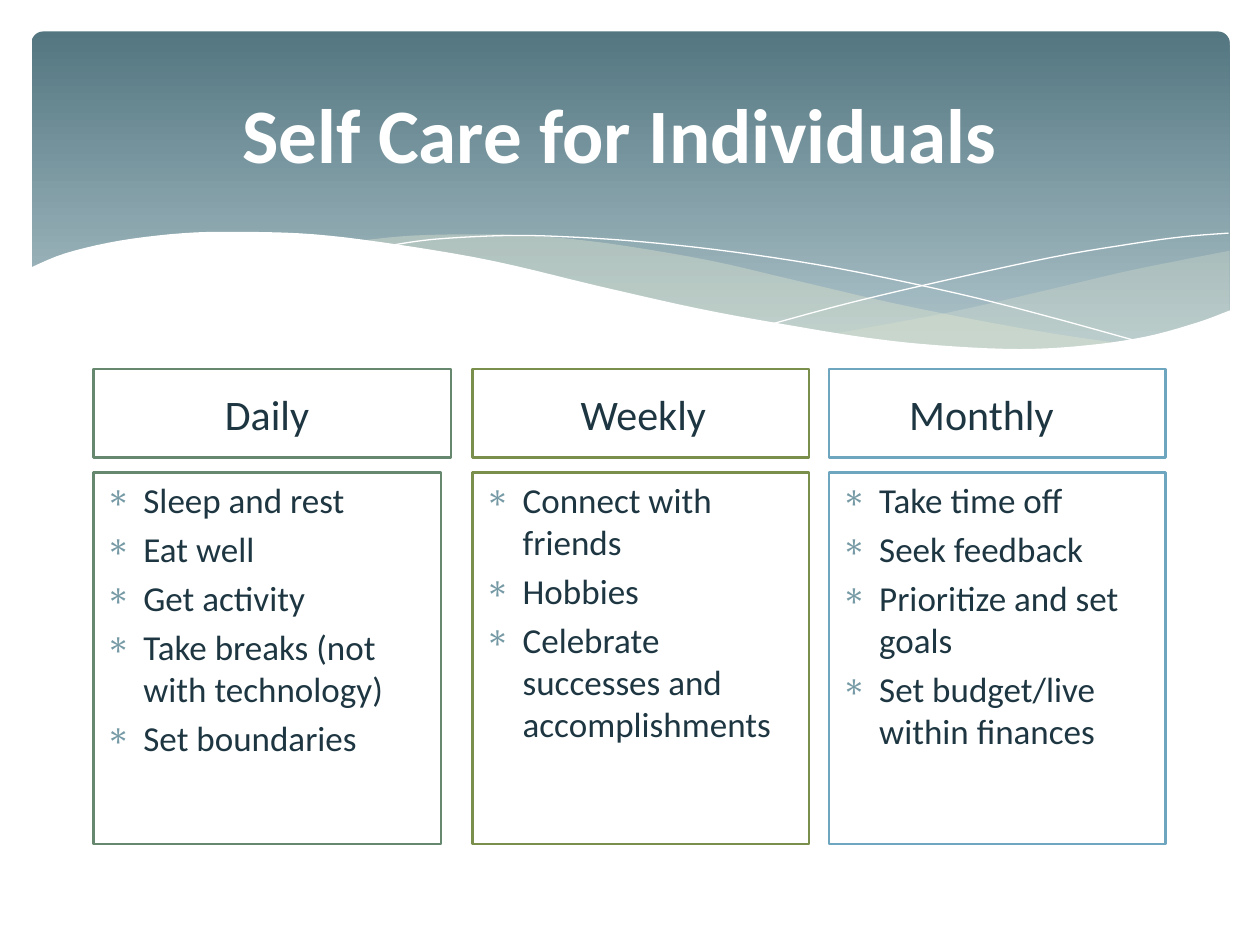
from lxml import etree
from pptx import Presentation
from pptx.dml.color import RGBColor
from pptx.enum.shapes import MSO_SHAPE
from pptx.enum.text import MSO_ANCHOR, PP_ALIGN
from pptx.oxml.ns import qn
from pptx.util import Inches, Pt

RECTANGLE = MSO_SHAPE.RECTANGLE
ROUNDED = MSO_SHAPE.ROUNDED_RECTANGLE
CENTER, LEFT = PP_ALIGN.CENTER, PP_ALIGN.LEFT
MIDDLE, TOP = MSO_ANCHOR.MIDDLE, MSO_ANCHOR.TOP
TITLE_ONLY = 5

WHITE = RGBColor(0xFF, 0xFF, 0xFF)
INK = RGBColor(0x1D, 0x36, 0x41)
BULLET = RGBColor(0x75, 0x9A, 0xA5)
BANNER_DARK = RGBColor(0x53, 0x76, 0x80)
BANNER_LIGHT = RGBColor(0xAC, 0xC2, 0xC9)
PALE = RGBColor(0xDF, 0xE6, 0xD0)
GREEN = RGBColor(0x65, 0x88, 0x6E)
OLIVE = RGBColor(0x7A, 0x8F, 0x4C)
BLUE = RGBColor(0x6F, 0xA6, 0xBF)

# Key points of the banner's curves, in inches
RIGHT_WAVE = [
    [(9.76, 1.99), (9.35, 2.07), (8.91, 2.16), (8.32, 2.3), (7.53, 2.48), (6.61, 2.65)],
    [(6.61, 2.65), (7.18, 2.72), (7.69, 2.77), (8.14, 2.78), (8.54, 2.76),
     (8.97, 2.7), (9.35, 2.61), (9.76, 2.47)],
]
MIDDLE_WAVE = [
    [(8.93, 2.73), (8.37, 2.65), (7.75, 2.54), (7.06, 2.4), (6.29, 2.22), (5.69, 2.08),
     (5.14, 1.98), (4.65, 1.91), (4.2, 1.87), (3.8, 1.86), (3.28, 1.87), (2.86, 1.91)],
    [(2.86, 1.91), (3.42, 1.99), (4.04, 2.11), (4.91, 2.32), (5.66, 2.48), (6.34, 2.61),
     (6.95, 2.7), (7.48, 2.76), (7.96, 2.78), (8.48, 2.77), (8.93, 2.73)],
]
FALLING_LINE = [
    [(3.09, 1.95), (3.44, 1.9), (4.01, 1.87), (4.5, 1.88), (5.1, 1.92), (5.82, 2),
     (6.65, 2.13), (7.6, 2.33), (8.31, 2.51), (9.07, 2.72)],
]
RISING_LINE = [
    [(6.13, 2.57), (6.72, 2.41), (7.48, 2.23), (8.36, 2.04), (8.95, 1.94),
     (9.38, 1.88), (9.75, 1.85)],
]
WHITE_WAVE = [
    [(0.23, 2.13), (0.52, 2.01), (0.95, 1.91), (1.46, 1.85), (1.93, 1.84), (2.5, 1.86),
     (3.15, 1.94), (3.91, 2.07), (4.75, 2.27), (5.55, 2.45), (6.26, 2.58), (6.88, 2.68),
     (7.44, 2.74), (8.09, 2.77), (8.63, 2.74), (9.1, 2.67), (9.5, 2.56), (9.77, 2.46)],
    [(9.77, 3.29), (0.23, 3.29)],
]

# Heading, colour, left, heading width, list width, heading (left, right) insets, items
COLUMNS = [
    ("Daily", GREEN, 0.74, 2.84, 2.76, (0.1, 0.18),
     ["Sleep and rest", "Eat well", "Get activity",
      "Take breaks (not with technology)", "Set boundaries"]),
    ("Weekly", OLIVE, 3.75, 2.67, 2.67, (0.14, 0.1),
     ["Connect with friends", "Hobbies", "Celebrate successes and accomplishments"]),
    ("Monthly", BLUE, 6.58, 2.67, 2.67, (0.1, 0.35),
     ["Take time off", "Seek feedback", "Prioritize and set goals",
      "Set budget/live within finances"]),
]


def smooth_points(points, steps=5):
    """Return points along a Catmull-Rom spline through the key points."""
    if len(points) < 3:
        return points
    padded = [points[0], *points, points[-1]]
    result = [points[0]]
    for a, b, c, d in zip(padded, padded[1:], padded[2:], padded[3:]):
        for step in range(1, steps + 1):
            t = step / steps
            result.append(tuple(
                0.5 * (2 * q + (r - p) * t + (2 * p - 5 * q + 4 * r - s) * t ** 2
                       + (3 * q - p - 3 * r + s) * t ** 3)
                for p, q, r, s in zip(a, b, c, d)))
    return result


class SlideBuilder:
    font = "Calibri"

    def __init__(self, slide):
        self.slide = slide

    def style_text(self, text_frame, size, color, align, anchor,
                   bold=False, insets=(0.1, 0.1)):
        text_frame.word_wrap = True
        text_frame.vertical_anchor = anchor
        text_frame.margin_left, text_frame.margin_right = map(Inches, insets)
        for paragraph in text_frame.paragraphs:
            paragraph.alignment = align
            for run in paragraph.runs:
                run.font.name = self.font
                run.font.size = Pt(size)
                run.font.bold = bold
                run.font.color.rgb = color

    def title(self, text, left, top, width, height):
        title = self.slide.shapes.title
        title.left, title.top = Inches(left), Inches(top)
        title.width, title.height = Inches(width), Inches(height)
        title.text_frame.text = text
        self.style_text(title.text_frame, 44, WHITE, CENTER, MIDDLE, True, (0.1, 0.26))
        # Bring the title in front of the banner
        title.element.getparent().append(title.element)

    def banner(self, left, top, width, height):
        shape = self.slide.shapes.add_shape(
            ROUNDED, Inches(left), Inches(top), Inches(width), Inches(height))
        shape.adjustments[0] = 0.034
        shape.shadow.inherit = False
        shape.line.fill.background()
        shape.fill.gradient()
        shape.fill.gradient_angle = 270
        stops = zip(shape.fill.gradient_stops, (0, 0.9), (BANNER_DARK, BANNER_LIGHT))
        for stop, position, color in stops:
            stop.position = position
            stop.color.rgb = color

    def curve(self, parts, closed):
        points = [(Inches(x), Inches(y)) for part in parts for x, y in smooth_points(part)]
        builder = self.slide.shapes.build_freeform(*points[0])
        builder.add_line_segments(points[1:], close=closed)
        shape = builder.convert_to_shape()
        shape.shadow.inherit = False
        return shape

    def wave(self, parts, color, opacity=100):
        shape = self.curve(parts, True)
        shape.line.fill.background()
        shape.fill.solid()
        shape.fill.fore_color.rgb = color
        if opacity < 100:
            color_element = shape.element.spPr.find(".//" + qn("a:srgbClr"))
            etree.SubElement(color_element, qn("a:alpha"), val=str(opacity * 1000))

    def wave_line(self, parts):
        shape = self.curve(parts, False)
        shape.fill.background()
        shape.line.color.rgb = WHITE
        shape.line.width = Pt(0)

    def box(self, left, top, width, height, color):
        shape = self.slide.shapes.add_shape(
            RECTANGLE, Inches(left), Inches(top), Inches(width), Inches(height))
        shape.shadow.inherit = False
        shape.fill.background()
        shape.line.color.rgb = color
        shape.line.width = Pt(1.5)
        return shape.text_frame

    def heading(self, text, left, width, color, insets):
        text_frame = self.box(left, 2.93, width, 0.7, color)
        text_frame.text = text
        self.style_text(text_frame, 24, INK, CENTER, MIDDLE, insets=insets)
        text_frame.paragraphs[0].space_before = Pt(4.8)

    def bullet_list(self, items, left, width, color):
        text_frame = self.box(left, 3.75, width, 2.95, color)
        text_frame.text = "\n".join(items)
        self.style_text(text_frame, 20, INK, LEFT, TOP)
        for paragraph in text_frame.paragraphs:
            paragraph.space_before = Pt(4)
            properties = paragraph._p.get_or_add_pPr()
            properties.set("marL", str(Inches(0.3)))
            properties.set("indent", str(-Inches(0.3)))
            bullet_color = etree.SubElement(properties, qn("a:buClr"))
            etree.SubElement(bullet_color, qn("a:srgbClr"), val=str(BULLET))
            etree.SubElement(properties, qn("a:buChar"), char="∗")


def main():
    presentation = Presentation()
    presentation.slide_width, presentation.slide_height = Inches(10), Inches(7.5)
    slide = presentation.slides.add_slide(presentation.slide_layouts[TITLE_ONLY])
    builder = SlideBuilder(slide)

    # Banner with waves
    builder.banner(0.25, 0.25, 9.51, 2.7)
    builder.wave(RIGHT_WAVE, PALE, 29)
    builder.wave(MIDDLE_WAVE, PALE, 40)
    builder.wave_line(FALLING_LINE)
    builder.wave_line(RISING_LINE)
    builder.wave(WHITE_WAVE, WHITE)
    builder.title("Self Care for Individuals", 0.5, 0.37, 9, 1.37)

    # Three columns of habits
    for name, color, left, heading_width, list_width, insets, items in COLUMNS:
        builder.heading(name, left, heading_width, color, insets)
        builder.bullet_list(items, left, list_width, color)

    presentation.save("out.pptx")


if __name__ == "__main__":
    main()
